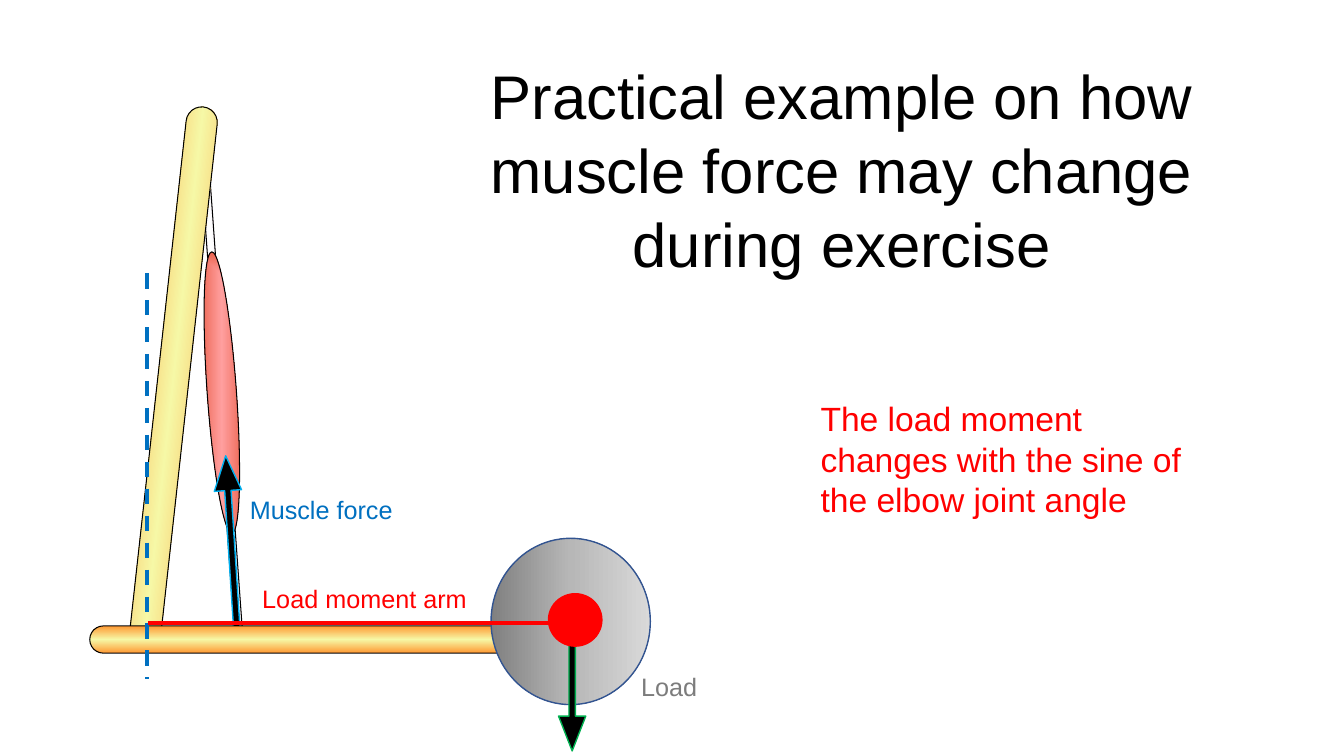
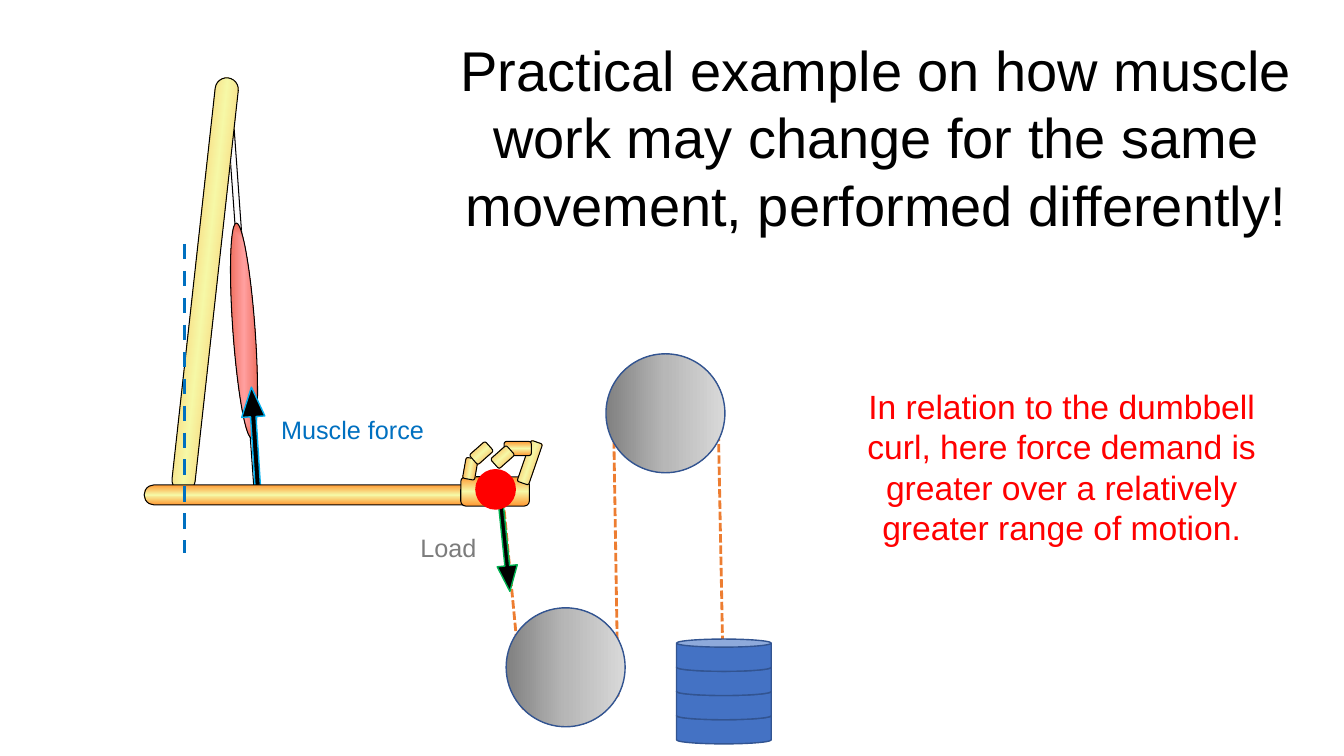
from lxml import etree
from pptx import Presentation
from pptx.dml.color import RGBColor
from pptx.enum.dml import MSO_LINE
from pptx.enum.shapes import MSO_CONNECTOR, MSO_SHAPE
from pptx.enum.text import MSO_ANCHOR, PP_ALIGN
from pptx.oxml import parse_xml
from pptx.oxml.ns import nsdecls, qn
from pptx.util import Inches, Pt

RECTANGLE, ROUNDED, ELLIPSE = MSO_SHAPE.RECTANGLE, MSO_SHAPE.ROUNDED_RECTANGLE, MSO_SHAPE.OVAL
UP_ARROW, DOWN_ARROW, CAN = MSO_SHAPE.UP_ARROW, MSO_SHAPE.DOWN_ARROW, MSO_SHAPE.CAN
DASH, SHORT_DASH = MSO_LINE.DASH, MSO_LINE.SQUARE_DOT
STRAIGHT = MSO_CONNECTOR.STRAIGHT
LEFT, CENTER = PP_ALIGN.LEFT, PP_ALIGN.CENTER
TOP, MIDDLE = MSO_ANCHOR.TOP, MSO_ANCHOR.MIDDLE


class Theme:
    font = "Arial"
    black, red, gray = "000000", "FF0000", "7C7C7C"
    blue, sky, green, rope = "0070C0", "00B0F0", "00B050", "ED7D31"
    weight, outline = "4472C4", "325491"
    tendon = ('<a:lin ang="5400000"/>', ["E3BBD8", "FFFFFF", "E3BBD8"])
    bone = ('<a:lin ang="5400000"/>', ["FF9933", "F6F8A6", "FF9933"])
    metal = ('<a:lin ang="0"/>', ["808080", "B7B7B7", "D9D9D9"])
    muscle = (
        '<a:path path="shape"><a:fillToRect l="50000" t="50000" r="50000" b="50000"/></a:path>',
        ["FF9F9F", "EA5F48"],
    )
    arrow_head = (0.235, 1.277)
    title_size, long_title_size, body_size, label_size = 44, 40, 24, 18


def add_part(shapes, kind, box, fill, line, width=1, rotation=0, adjust=()):
    part = shapes.add_shape(kind, *[Inches(length) for length in box])
    part.shadow.inherit = False
    part.rotation = rotation
    for index, value in enumerate(adjust):
        part.adjustments[index] = value
    if isinstance(fill, str):
        part.fill.solid()
        part.fill.fore_color.rgb = RGBColor.from_string(fill)
    else:
        direction, colors = fill
        stops = "".join(
            f'<a:gs pos="{100000 * index // (len(colors) - 1)}"><a:srgbClr val="{color}"/></a:gs>'
            for index, color in enumerate(colors)
        )
        part._element.spPr.insert(2, parse_xml(
            f'<a:gradFill {nsdecls("a")} rotWithShape="1"><a:gsLst>{stops}</a:gsLst>{direction}</a:gradFill>'
        ))
    part.line.color.rgb = RGBColor.from_string(line)
    part.line.width = Pt(width)


def add_rule(page, ends, color, width, dash=None):
    rule = page.shapes.add_connector(STRAIGHT, *[Inches(length) for length in ends])
    rule.line.color.rgb = RGBColor.from_string(color)
    rule.line.width = Pt(width)
    if dash:
        rule.line.dash_style = dash
    etree.SubElement(rule._element.spPr, qn("a:effectLst"))


deck = Presentation()
deck.slide_width, deck.slide_height = Inches(13.33), Inches(7.5)
dumbbell_page, pulley_page = [deck.slides.add_slide(deck.slide_layouts[6]) for _ in range(2)]

add_rule(pulley_page, (5.19, 7.04, 4.98, 4.85), Theme.rope, 2, SHORT_DASH)

arms = [
    (dumbbell_page, (-0.16, 3.93, 4.72, 0.08), (0.8, 3.75, 2.8, 0.29), (2.16, 4.52, 0.27, 1.76),
     (-0.99, 3.6, 5.42, 0.31), (0.89, 6.21, 4.61, 0.27)),
    (pulley_page, (0.62, 3.03, 3.6, 0.06), (1.35, 3.17, 2.14, 0.22), (2.41, 3.84, 0.23, 0.98),
     (-0.03, 2.71, 4.13, 0.23), (1.43, 4.81, 3.44, 0.2)),
]
for page, tendon, muscle, force, upper_arm, forearm in arms:
    add_part(page.shapes, RECTANGLE, tendon, Theme.tendon, Theme.black, 0.75, 85.9)
    add_part(page.shapes, ELLIPSE, muscle, Theme.muscle, Theme.black, 0.75, 85.9)
    add_part(page.shapes, UP_ARROW, force, Theme.black, Theme.sky, 1, 356.3, Theme.arrow_head)
    add_part(page.shapes, ROUNDED, upper_arm, Theme.bone, Theme.black, 0.75, 276.3, (0.5,))
    add_part(page.shapes, ROUNDED, forearm, Theme.bone, Theme.black, 0.75, 0, (0.5,))

hand = pulley_page.shapes.add_group_shape()
for box, rotation in [
    ((4.57, 4.73, 0.68, 0.29), 0),
    ((5.04, 4.53, 0.43, 0.12), 289),
    ((5, 4.38, 0.27, 0.14), 0),
    ((4.88, 4.47, 0.21, 0.13), 318.5),
    ((4.56, 4.59, 0.21, 0.12), 279.9),
    ((4.67, 4.43, 0.21, 0.13), 318.5),
]:
    add_part(hand.shapes, ROUNDED, box, Theme.bone, Theme.black, 0.75, rotation)

add_part(dumbbell_page.shapes, ELLIPSE, (4.87, 5.34, 1.58, 1.65), Theme.metal, Theme.outline)

for page, load, rotation, vertical in [
    (dumbbell_page, (5.54, 5.98, 0.27, 1.47), 0, (1.46, 2.71, 1.46, 6.74)),
    (pulley_page, (4.9, 4.75, 0.2, 1.12), 354.1, (1.83, 2.42, 1.83, 5.49)),
]:
    add_part(page.shapes, DOWN_ARROW, load, Theme.black, Theme.green, 1, rotation, Theme.arrow_head)
    add_rule(page, vertical, Theme.blue, 2.75, DASH)

add_rule(dumbbell_page, (1.47, 6.18, 5.64, 6.18), Theme.red, 2.5)

for rope in [(6.13, 6.91, 6.08, 3.83), (7.18, 7.06, 7.12, 3.98)]:
    add_rule(pulley_page, rope, Theme.rope, 2, SHORT_DASH)
weight_stack = pulley_page.shapes.add_group_shape()
for level in range(4):
    add_part(weight_stack.shapes, CAN, (6.71, 7.06 - 0.24 * level, 0.94, 0.32), Theme.weight, Theme.outline)
for left, top in [(5.02, 6.03), (6.01, 3.51)]:
    add_part(pulley_page.shapes, ELLIPSE, (left, top, 1.18, 1.18), Theme.metal, Theme.outline)

for page, grip in [(dumbbell_page, (5.44, 5.89, 0.53, 0.52)), (pulley_page, (4.72, 4.66, 0.39, 0.39))]:
    add_part(page.shapes, ELLIPSE, grip, Theme.red, Theme.red)

texts = [
    (dumbbell_page, (3.85, 0.69, 9, 1.97), "Practical example on how muscle force may change during exercise",
     Theme.title_size, Theme.black, CENTER, MIDDLE),
    (dumbbell_page, (8.04, 3.9, 3.83, 1.31), "The load moment changes with the sine of the elbow joint angle",
     Theme.body_size, Theme.red, LEFT, TOP),
    (dumbbell_page, (6.26, 6.61, 1.81, 0.4), "Load", Theme.label_size, Theme.gray, LEFT, TOP),
    (dumbbell_page, (2.38, 4.85, 2.43, 0.4), "Muscle force", Theme.label_size, Theme.blue, LEFT, TOP),
    (dumbbell_page, (1.82, 5.74, 3.59, 0.4), "Load moment arm", Theme.label_size, Theme.red, CENTER, TOP),
    (pulley_page, (4.2, 0.25, 8.97, 2.21),
     "Practical example on how muscle work may change for the same movement, performed differently!",
     Theme.long_title_size, Theme.black, CENTER, MIDDLE),
    (pulley_page, (8.36, 3.78, 4.34, 1.72),
     "In relation to the dumbbell curl, here force demand is greater over a relatively greater range of motion.",
     Theme.body_size, Theme.red, CENTER, TOP),
    (pulley_page, (4.07, 5.23, 1.81, 0.4), "Load", Theme.label_size, Theme.gray, LEFT, TOP),
    (pulley_page, (2.69, 4.06, 1.81, 0.4), "Muscle force", Theme.label_size, Theme.blue, LEFT, TOP),
]
for page, box, words, size, color, alignment, anchor in texts:
    frame = page.shapes.add_textbox(*[Inches(length) for length in box]).text_frame
    frame.word_wrap = True
    frame.vertical_anchor = anchor
    frame.text = words
    para = frame.paragraphs[0]
    para.alignment = alignment
    span = para.runs[0]
    span.font.name = Theme.font
    span.font.size = Pt(size)
    span.font.color.rgb = RGBColor.from_string(color)

deck.save("out.pptx")
